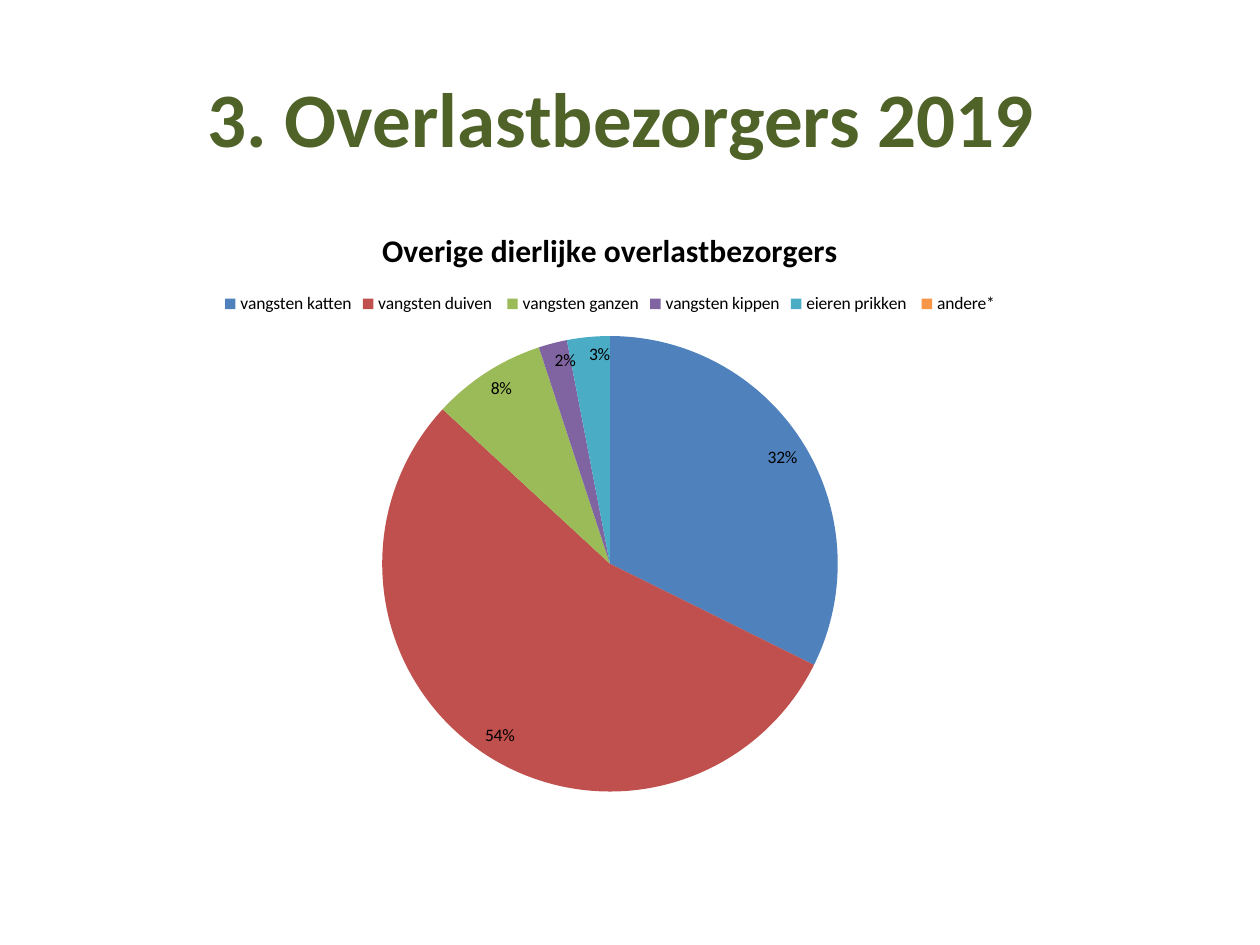
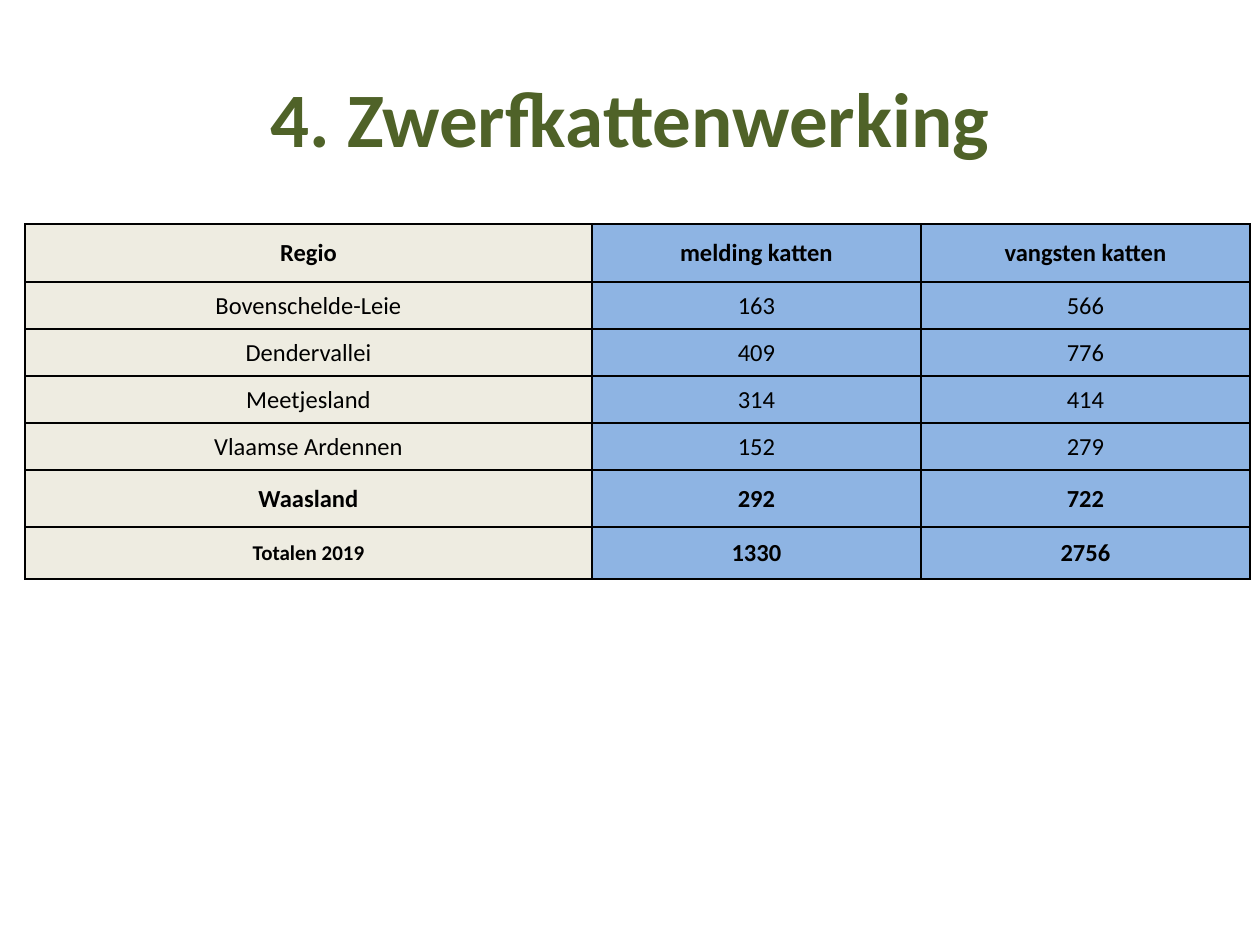
from lxml.etree import SubElement
from pptx import Presentation
from pptx.chart.data import CategoryChartData
from pptx.dml.color import RGBColor
from pptx.enum.chart import XL_CHART_TYPE as ChartType
from pptx.enum.chart import XL_LABEL_POSITION as LabelPosition
from pptx.enum.chart import XL_LEGEND_POSITION as LegendPosition
from pptx.enum.text import MSO_ANCHOR as Anchor
from pptx.enum.text import PP_ALIGN as Align
from pptx.oxml.ns import qn
from pptx.util import Pt

PX = 914400 // 126
FONT = "Calibri"
BLACK = RGBColor(0x00, 0x00, 0x00)
OLIVE = RGBColor(0x4F, 0x62, 0x28)
CREAM = RGBColor(0xEE, 0xEC, 0xE1)
SKY = RGBColor(0x8E, 0xB4, 0xE3)
BLUE = RGBColor(0x4F, 0x81, 0xBD)
RED = RGBColor(0xC0, 0x50, 0x4D)
GREEN = RGBColor(0x9B, 0xBB, 0x59)
PURPLE = RGBColor(0x80, 0x64, 0xA2)
TEAL = RGBColor(0x4B, 0xAC, 0xC6)
ORANGE = RGBColor(0xF7, 0x96, 0x46)

CHART_TITLE = "Overige dierlijke overlastbezorgers"
NUISANCE_SHARES = [
    ("vangsten katten", 32, BLUE),
    ("vangsten duiven ", 54, RED),
    ("vangsten ganzen", 8, GREEN),
    ("vangsten kippen", 2, PURPLE),
    ("eieren prikken ", 3, TEAL),
    ("andere*", 0, ORANGE),
]
CAT_ROWS = [
    (58, True, ("Regio", "melding katten", "vangsten katten")),
    (47, False, ("Bovenschelde-Leie", "163", "566")),
    (47, False, ("Dendervallei", "409", "776")),
    (47, False, ("Meetjesland", "314", "414")),
    (47, False, ("Vlaamse Ardennen", "152", "279")),
    (57, True, ("Waasland", "292", "722")),
    (52, True, ("Totalen 2019", "1330", "2756")),
]
COLUMN_WIDTHS = (567, 329, 329)
COLUMN_FILLS = (CREAM, SKY, SKY)


def box(*lengths):
    """Turn px lengths into EMU."""
    return [length * PX for length in lengths]


def set_format(target, values):
    """Set each attribute named in values on the target."""
    for name, value in values.items():
        setattr(target, name, value)


def format_font(font, size, color=BLACK, bold=False):
    """Give a font the shared typeface with a size, colour and weight."""
    set_format(font, {"name": FONT, "size": Pt(size), "bold": bold})
    font.color.rgb = color


def write_centred(text_frame, text, size, color=BLACK, bold=False):
    """Write one centred line of text."""
    paragraph = text_frame.paragraphs[0]
    paragraph.alignment = Align.CENTER
    run = paragraph.add_run()
    run.text = text
    format_font(run.font, size, color, bold)


def add_titled_slide(presentation, title):
    """Add a blank slide with the shared title style."""
    slide = presentation.slides.add_slide(presentation.slide_layouts[6])
    text_frame = slide.shapes.add_textbox(*box(63, 38, 1134, 157)).text_frame
    set_format(text_frame, {"word_wrap": True, "vertical_anchor": Anchor.MIDDLE})
    write_centred(text_frame, title, 44, OLIVE, True)
    return slide


def add_share_pie(slide):
    """Add the pie chart of nuisance animals."""
    names, shares, colors = zip(*NUISANCE_SHARES)
    data = CategoryChartData()
    data.categories = names
    data.add_series(CHART_TITLE, shares)
    chart = slide.shapes.add_chart(ChartType.PIE, *box(84, 204, 1052, 605), data).chart
    format_font(chart.font, 10)
    chart.has_title = True
    write_centred(chart.chart_title.text_frame, CHART_TITLE, 18, bold=True)
    chart.has_legend = True
    set_format(chart.legend, {"position": LegendPosition.TOP, "include_in_layout": False})
    plot = chart.plots[0]
    set_format(plot, {"vary_by_categories": True, "has_data_labels": True})
    set_format(plot.data_labels, {
        "show_value": True,
        "number_format": '0"%";;',
        "number_format_is_linked": False,
        "position": LabelPosition.INSIDE_END,
    })
    format_font(plot.data_labels.font, 10)
    for index, color in enumerate(colors):
        fill = plot.series[0].points[index].format.fill
        fill.solid()
        fill.fore_color.rgb = color


def add_borders(cell):
    """Draw a thin black line on each side of a cell."""
    properties = cell._tc.get_or_add_tcPr()
    for side in ("a:lnL", "a:lnR", "a:lnT", "a:lnB"):
        line = SubElement(properties, qn(side), w=str(Pt(1)))
        fill = SubElement(line, qn("a:solidFill"))
        SubElement(fill, qn("a:srgbClr"), val=str(BLACK))


def fill_cell(cell, text, size, bold, color, side_margin):
    """Write a bordered, coloured table cell."""
    set_format(cell, {
        "vertical_anchor": Anchor.MIDDLE,
        "margin_left": side_margin * PX,
        "margin_right": side_margin * PX,
        "margin_top": PX,
        "margin_bottom": 0,
    })
    add_borders(cell)
    cell.fill.solid()
    cell.fill.fore_color.rgb = color
    write_centred(cell.text_frame, text, size, bold=bold)


def add_cat_table(slide):
    """Add the table of cat reports and catches per region."""
    heights = [height for height, _, _ in CAT_ROWS]
    bounds = box(25, 224, sum(COLUMN_WIDTHS), sum(heights))
    table = slide.shapes.add_table(len(CAT_ROWS), len(COLUMN_WIDTHS), *bounds).table
    set_format(table, {"first_row": False, "horz_banding": False})
    for column, width in zip(table.columns, COLUMN_WIDTHS):
        column.width = width * PX
    for row_index, (height, bold, texts) in enumerate(CAT_ROWS):
        table.rows[row_index].height = height * PX
        for column_index, text in enumerate(texts):
            size = 12 if text.startswith("Totalen") else 14
            side_margin = 4 if row_index == 0 or size == 12 else 1
            fill_cell(table.cell(row_index, column_index), text, size, bold,
                      COLUMN_FILLS[column_index], side_margin)


def main():
    """Build and save both slides."""
    presentation = Presentation()
    set_format(presentation, {"slide_width": 1260 * PX, "slide_height": 945 * PX})
    add_share_pie(add_titled_slide(presentation, "3. Overlastbezorgers 2019 "))
    add_cat_table(add_titled_slide(presentation, "4. Zwerfkattenwerking"))
    presentation.save("out.pptx")


if __name__ == "__main__":
    main()
